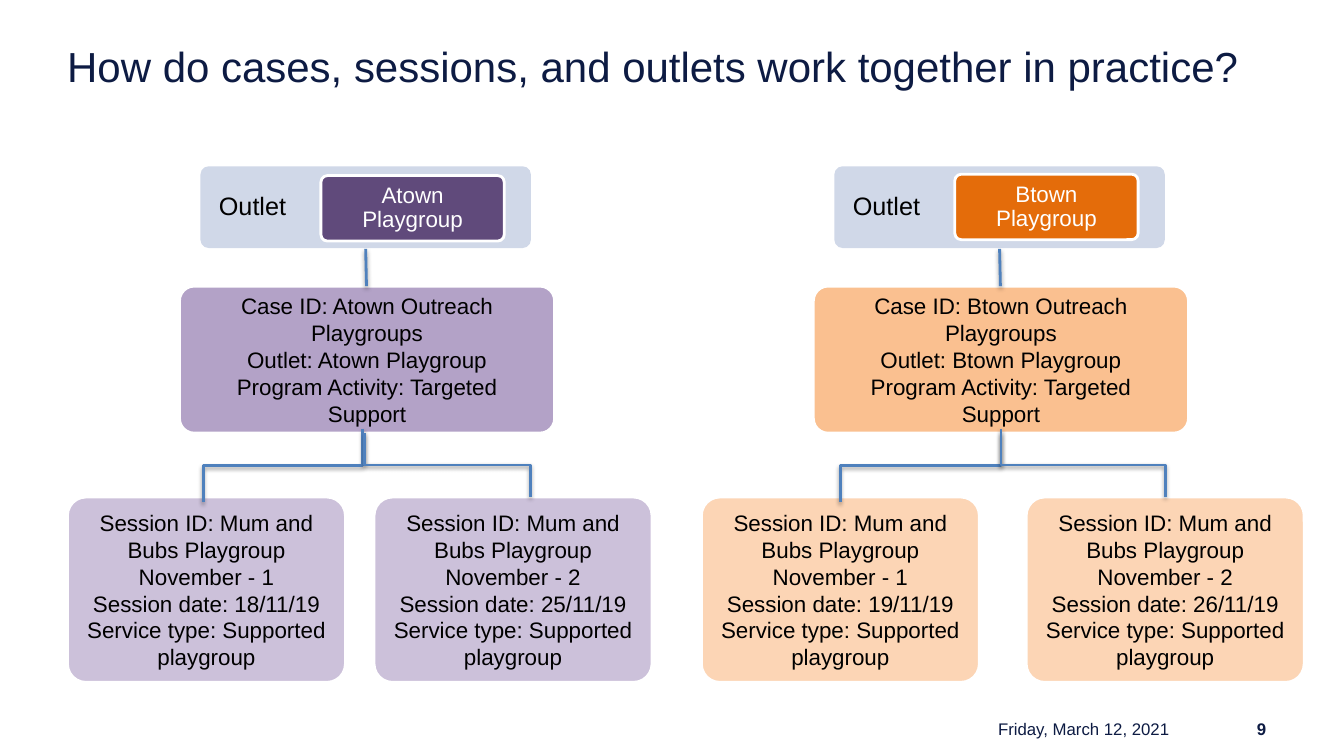
from dataclasses import dataclass

from lxml.etree import SubElement
from pptx import Presentation
from pptx.dml.color import RGBColor
from pptx.enum.shapes import MSO_CONNECTOR as Connector, MSO_SHAPE as Shape
from pptx.enum.text import MSO_ANCHOR as Anchor, PP_ALIGN as Align
from pptx.oxml.ns import qn
from pptx.util import Pt


@dataclass(frozen=True)
class Theme:
    font: str = "Arial"
    navy: str = "0D1B43"
    black: str = "000000"
    white: str = "FFFFFF"
    outlet: str = "D0D8E8"
    link: str = "4F81BD"
    title_size: int = 30
    outlet_size: int = 18
    body_size: int = 16
    footer_size: int = 12
    line_width: int = 2


@dataclass(frozen=True)
class Town:
    name: str
    badge_fill: str
    case_fill: str
    session_fill: str
    dates: tuple
    second_session: float  # offset of the second session from the left edge
    badge_top: float
    stems: tuple  # x offsets where the left and right branches start
    ends: tuple  # x offsets where the branches end


THEME = Theme()
TOWNS = (
    Town("Atown", "604A7B", "B3A2C7", "CCC1DA", ("18/11/19", "25/11/19"),
         219, 6.6, (211, 212.4), (97.2, 330.5)),
    Town("Btown", "E46C0A", "FAC090", "FCD5B5", ("19/11/19", "26/11/19"),
         232, 5.6, (214, 214), (99.4, 331.2)),
)


def rgb(value):
    return RGBColor.from_string(value)


def write(shape, text, size, color, align, anchor=Anchor.MIDDLE,
          inset=(0, 0), bold=False, spacing=None):
    frame = shape.text_frame
    frame.text = text
    frame.word_wrap = True
    frame.vertical_anchor = anchor
    frame.margin_left = frame.margin_right = Pt(inset[0])
    frame.margin_top = frame.margin_bottom = Pt(inset[1])
    for paragraph in frame.paragraphs:
        paragraph.alignment = align
        if spacing:
            paragraph.line_spacing = spacing
        for run in paragraph.runs:
            run.font.name = THEME.font
            run.font.size = Pt(size)
            run.font.bold = bold
            run.font.color.rgb = rgb(color)


def add_label(slide, box, *args, **options):
    write(slide.shapes.add_textbox(*map(Pt, box)), *args, **options)


def add_card(slide, box, fill, outlined=True):
    card = slide.shapes.add_shape(Shape.ROUNDED_RECTANGLE, *map(Pt, box))
    card.adjustments[0] = 0.1
    card.shadow.inherit = False
    card.fill.solid()
    card.fill.fore_color.rgb = rgb(fill)
    if outlined:
        card.line.color.rgb = rgb(THEME.white)
        card.line.width = Pt(THEME.line_width)
    else:
        card.line.fill.background()
    return card


def add_link(slide, kind, x1, y1, x2, y2):
    link = slide.shapes.add_connector(kind, *map(Pt, (x1, y1, x2, y2)))
    link.line.color.rgb = rgb(THEME.link)
    link.line.width = Pt(THEME.line_width)
    # Soft shadow straight below the line
    effects = SubElement(link._element.spPr, qn("a:effectLst"))
    shadow = SubElement(effects, qn("a:outerShdw"), blurRad="40000",
                        dist="20000", dir="5400000", rotWithShape="0")
    color = SubElement(shadow, qn("a:srgbClr"), val=THEME.black)
    SubElement(color, qn("a:alpha"), val="38000")
    return link


def add_branch(slide, x1, y1, x2, y2):
    """Elbow that runs down, across and down: a quarter turn of the preset."""
    mid_x, mid_y = (x1 + x2) / 2, (y1 + y2) / 2
    half_w, half_h = (y2 - y1) / 2, abs(x2 - x1) / 2
    branch = add_link(slide, Connector.ELBOW, mid_x - half_w, mid_y - half_h,
                      mid_x + half_w, mid_y + half_h)
    xfrm = branch._element.spPr.xfrm
    if x2 > x1:
        xfrm.set("rot", "16200000")
        xfrm.set("flipH", "1")
    else:
        xfrm.set("rot", "5400000")


def add_header(slide, box):
    add_label(slide, box, "How do cases, sessions, and outlets work together in practice?",
              THEME.title_size, THEME.navy, Align.LEFT, Anchor.TOP)


def add_footer(slide, left, top):
    parts = (("Friday, March 12, 2021", 0, 224, False), ("9", 214.5, 78.5, True))
    for text, offset, width, bold in parts:
        add_label(slide, (left + offset, top, width, 16.6), text, THEME.footer_size,
                  THEME.navy, Align.RIGHT, inset=(7.2, 3.6), bold=bold)


def add_town(slide, left, top, town):
    # Outlet with its name badge
    outlet = add_card(slide, (left + 95, top, 236, 58.4), THEME.outlet, outlined=False)
    write(outlet, "Outlet", THEME.outlet_size, THEME.black, Align.LEFT,
          inset=(11.5, 4), spacing=0.9)
    badge = add_card(slide, (left + 181, top + town.badge_top, 131, 46.8), town.badge_fill)
    write(badge, f"{town.name} Playgroup", THEME.body_size, THEME.white, Align.CENTER,
          inset=(8, 4), spacing=0.9)

    # Case
    case = add_card(slide, (left + 80, top + 85.6, 268, 105), town.case_fill)
    write(case, f"Case ID: {town.name} Outreach Playgroups\n"
                f"Outlet: {town.name} Playgroup\n"
                "Program Activity: Targeted Support",
          THEME.body_size, THEME.black, Align.CENTER, inset=(8, 4))

    # Sessions
    for number, date in enumerate(town.dates, start=1):
        offset = town.second_session * (number - 1)
        session = add_card(slide, (left + offset, top + 236.2, 198.6, 132.4),
                           town.session_fill)
        write(session, f"Session ID: Mum and Bubs Playgroup November - {number}\n"
                       f"Session date: {date}\n"
                       "Service type: Supported playgroup",
              THEME.body_size, THEME.black, Align.CENTER, inset=(8.5, 4))

    # Links between the levels
    add_link(slide, Connector.STRAIGHT, left + 213, top + 59, left + 213.6, top + 85.6)
    spans = ((187.6, 240), (190.4, 236.2))
    for stem, end, (start_y, end_y) in zip(town.stems, town.ends, spans):
        add_branch(slide, left + stem, top + start_y, left + end, top + end_y)


def main():
    deck = Presentation()
    deck.slide_width, deck.slide_height = Pt(960), Pt(540)
    slide = deck.slides.add_slide(deck.slide_layouts[6])
    add_header(slide, (48, 28.8, 864, 47.5))
    for index, town in enumerate(TOWNS):
        add_town(slide, 48.2 + 452.8 * index, 118.8, town)
    add_footer(slide, 618.5, 512.6)
    deck.save("out.pptx")


if __name__ == "__main__":
    main()
